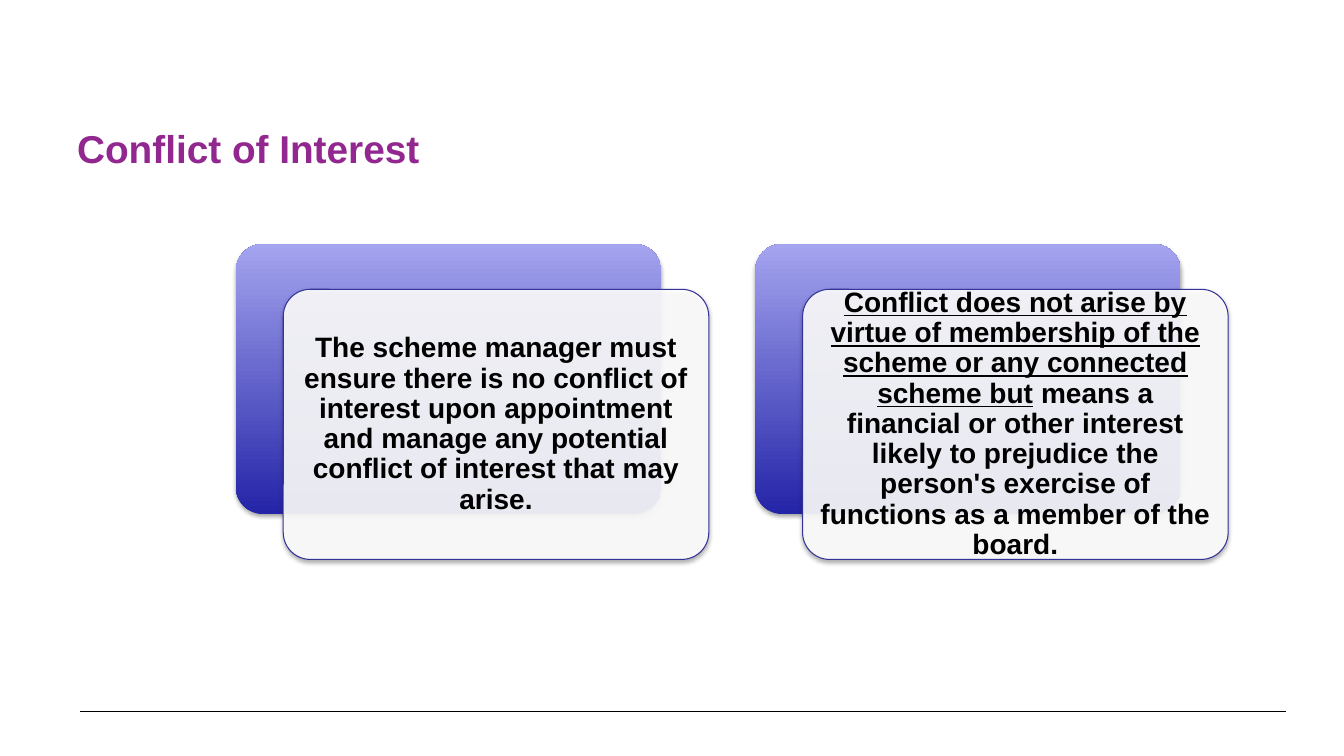
import pptx
import pptx.dml.color
import pptx.enum.shapes
import pptx.enum.text
import pptx.oxml
import pptx.oxml.ns
import pptx.util

RGBColor = pptx.dml.color.RGBColor
Pt = pptx.util.Pt
MSO_SHAPE = pptx.enum.shapes.MSO_SHAPE
MIDDLE = pptx.enum.text.MSO_ANCHOR.MIDDLE
CENTER = pptx.enum.text.PP_ALIGN.CENTER
NS = pptx.oxml.ns.nsdecls("a")

BLACK = RGBColor(0x00, 0x00, 0x00)
WHITE = RGBColor(0xFF, 0xFF, 0xFF)
PURPLE = RGBColor(0x91, 0x27, 0x8F)
NAVY = RGBColor(0x24, 0x24, 0xA8)
LAVENDER = RGBColor(0xA4, 0xA4, 0xEF)
OUTLINE = RGBColor(0x33, 0x33, 0x99)

# Positions and sizes are percentages of the slide's width and height.
CARD_LEFT, CARD_TOP, CARD_STEP = 17.55, 32.27, 38.64
CARD_SIZE = (31.66, 35.73)
FRONT_DX, FRONT_DY = 3.53, 6

# Each card is a list of (text, underlined) runs.
CARDS = [
    [("The scheme manager must ensure there is no conflict of interest upon "
      "appointment and manage any potential conflict of interest that may arise.", False)],
    [("Conflict does not arise by virtue of membership of the scheme or any "
      "connected scheme but", True),
     (" means a financial or other interest likely to prejudice the person's "
      "exercise of functions as a member of the board.", False)],
]


class Deck:
    font = "Arial"

    def __init__(self):
        self.prs = pptx.Presentation()
        self.prs.slide_width = pptx.util.Inches(13.33)
        self.prs.slide_height = pptx.util.Inches(7.5)
        self.s = self.prs.slides.add_slide(self.prs.slide_layouts[6])

    def x(self, share):
        return int(self.prs.slide_width * share / 100)

    def y(self, share):
        return int(self.prs.slide_height * share / 100)

    def box(self, left, top, width, height):
        return self.x(left), self.y(top), self.x(width), self.y(height)

    def style(self, p, size, color):
        p.font.name, p.font.size, p.font.bold = self.font, Pt(size), True
        p.font.color.rgb = color

    def rule(self, left, right, top):
        line = self.s.shapes.add_connector(
            pptx.enum.shapes.MSO_CONNECTOR.STRAIGHT,
            self.x(left), self.y(top), self.x(right), self.y(top))
        line.line.color.rgb = BLACK
        line.line.width = Pt(0.75)
        line._element.spPr.append(pptx.oxml.parse_xml(f"<a:effectLst {NS}/>"))

    def title(self, text, *place):
        tf = self.s.shapes.add_textbox(*self.box(*place)).text_frame
        tf.word_wrap = True
        tf.vertical_anchor = MIDDLE
        p = tf.paragraphs[0]
        p.text = text
        self.style(p, 27.7, PURPLE)

    def panel(self, left, top):
        """Add a rounded card-sized rectangle with a soft shadow below it."""
        sp = self.s.shapes.add_shape(
            MSO_SHAPE.ROUNDED_RECTANGLE, *self.box(left, top, *CARD_SIZE))
        sp.adjustments[0] = 0.1
        sp.shadow.inherit = False
        effects = sp._element.spPr.find(pptx.oxml.ns.qn("a:effectLst"))
        effects.append(pptx.oxml.parse_xml(
            f'<a:outerShdw {NS} blurRad="{Pt(3.1)}" dist="{Pt(1.8)}" dir="5400000" '
            'rotWithShape="0"><a:srgbClr val="000000"><a:alpha val="35000"/>'
            '</a:srgbClr></a:outerShdw>'))
        return sp

    def back_panel(self, left, top):
        sp = self.panel(left, top)
        sp.fill.gradient()
        sp.fill.gradient_angle = 90
        for stop, color in zip(sp.fill.gradient_stops, (NAVY, LAVENDER)):
            stop.color.rgb = color
        sp.line.fill.background()

    def front_panel(self, left, top, runs):
        sp = self.panel(left, top)
        sp.fill.solid()
        sp.fill.fore_color.rgb = WHITE
        color = sp._element.spPr.find(".//" + pptx.oxml.ns.qn("a:srgbClr"))
        color.append(pptx.oxml.parse_xml(f'<a:alpha {NS} val="90000"/>'))
        sp.line.color.rgb = OUTLINE
        sp.line.width = Pt(0.75)
        tf = sp.text_frame
        tf.word_wrap = True
        tf.vertical_anchor = MIDDLE
        tf.margin_left = tf.margin_right = pptx.util.Inches(0.08)
        tf.margin_top = tf.margin_bottom = pptx.util.Inches(0.08)
        p = tf.paragraphs[0]
        p.alignment = CENTER
        p.line_spacing = 0.9
        self.style(p, 20, BLACK)
        for text, underlined in runs:
            r = p.add_run()
            r.text = text
            if underlined:
                r.font.underline = True

    def card(self, left, top, runs):
        self.back_panel(left, top)
        self.front_panel(left + FRONT_DX, top + FRONT_DY, runs)


def main():
    deck = Deck()
    deck.rule(5.93, 95.72, 94.13)
    deck.title("Conflict of Interest", 5, 11.2, 90, 16.67)
    for i, runs in enumerate(CARDS):
        deck.card(CARD_LEFT + i * CARD_STEP, CARD_TOP, runs)
    deck.prs.save("out.pptx")


if __name__ == "__main__":
    main()
